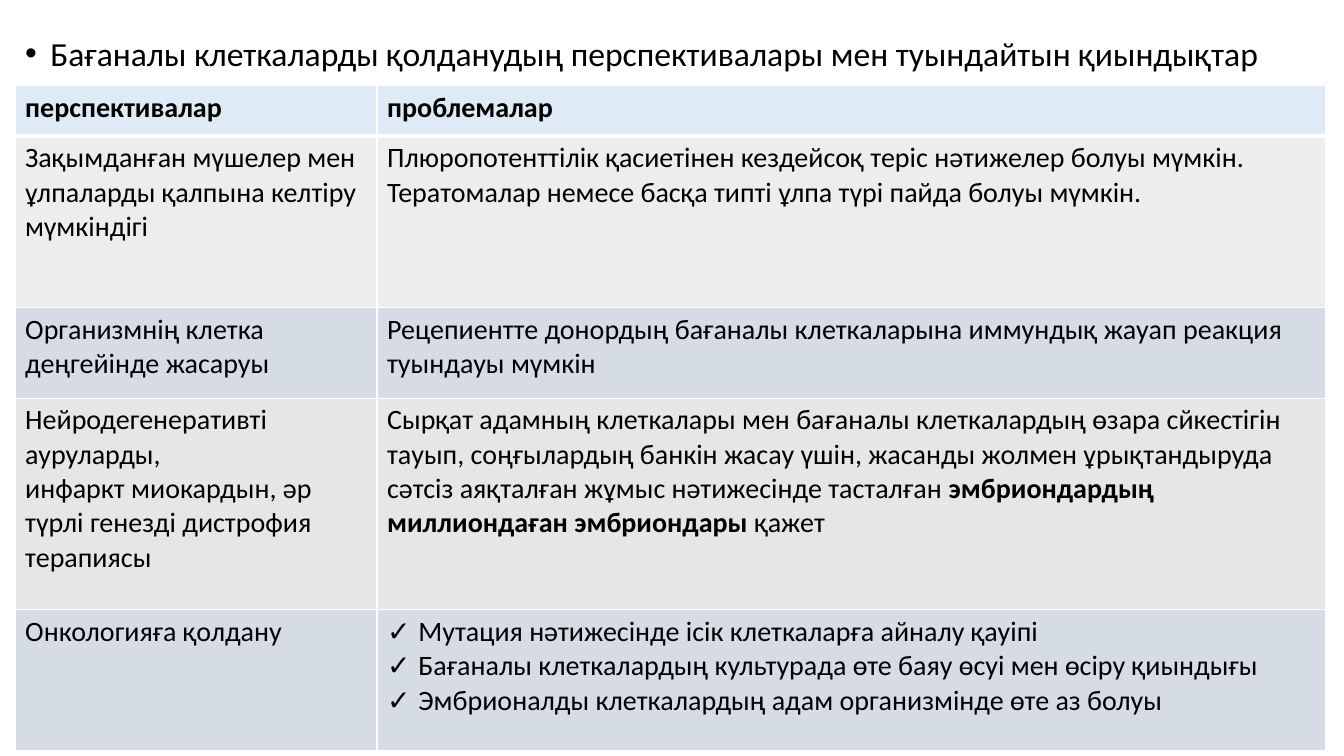
from dataclasses import dataclass

from lxml.etree import SubElement
from pptx import Presentation
from pptx.dml.color import RGBColor
from pptx.enum.text import MSO_ANCHOR, PP_ALIGN
from pptx.oxml import parse_xml
from pptx.oxml.ns import nsdecls, qn
from pptx.util import Inches, Length, Pt

BLACK = RGBColor(0x00, 0x00, 0x00)
WHITE = RGBColor(0xFF, 0xFF, 0xFF)
SKY = RGBColor(0xDE, 0xEB, 0xF7)
PALE = RGBColor(0xED, 0xED, 0xED)
STEEL = RGBColor(0xD6, 0xDC, 0xE5)
GREY = RGBColor(0xE7, 0xE6, 0xE6)

FONT = "Calibri"
UNIT = 0.1
LEFT, WIDE = 1.5, 130.1
COLS = (35.9, 94.1)


@dataclass(frozen=True)
class Run:
    text: str
    bold: bool = False


@dataclass(frozen=True)
class Para:
    runs: tuple[Run, ...]
    bullet: str = ""
    indent: float = 0


@dataclass(frozen=True)
class Row:
    height: float
    fill: RGBColor
    cells: tuple[tuple[Para, ...], ...]
    edge: float = 1


def grid(count: float) -> Length:
    return Inches(count * UNIT)


def plain(*lines: str, bold: bool = False) -> tuple[Para, ...]:
    return tuple(Para((Run(line, bold),)) for line in lines)


def checks(*lines: str) -> tuple[Para, ...]:
    return tuple(Para((Run(line),), "✓", 3.1) for line in lines)


TITLE = (Para((Run("Бағаналы клеткаларды қолданудың перспективалары мен туындайтын қиындықтар"),), "•", 2.5),)

ROWS = (
    Row(5, SKY, (plain("перспективалар", bold=True), plain("проблемалар", bold=True)), 3),
    Row(17, PALE, (
        plain("Зақымданған мүшелер мен ұлпаларды қалпына келтіру мүмкіндігі"),
        plain("Плюропотенттілік қасиетінен кездейсоқ теріс нәтижелер болуы мүмкін.",
              "Тератомалар немесе басқа типті ұлпа түрі пайда болуы мүмкін."),
    )),
    Row(9, STEEL, (
        plain("Организмнің клетка деңгейінде жасаруы"),
        plain("Рецепиентте донордың бағаналы клеткаларына иммундық жауап реакция туындауы мүмкін"),
    )),
    Row(21, GREY, (
        plain("Нейродегенеративті ауруларды,",
              "инфаркт миокардын, әр түрлі генезді дистрофия терапиясы"),
        (Para((
            Run("Сырқат адамның клеткалары мен бағаналы клеткалардың өзара сйкестігін тауып, "
                "соңғылардың банкін жасау үшін, жасанды жолмен ұрықтандыруда сәтсіз аяқталған "
                "жұмыс нәтижесінде тасталған "),
            Run("эмбриондардың миллиондаған эмбриондары ", True),
            Run("қажет"),
        )),),
    )),
    Row(14, STEEL, (
        plain("Онкологияға қолдану"),
        checks("Мутация нәтижесінде ісік клеткаларға айналу қауіпі",
               "Бағаналы клеткалардың культурада өте баяу өсуі мен өсіру қиындығы",
               "Эмбрионалды клеткалардың адам организмінде өте аз болуы"),
    )),
)


def write(frame, paras: tuple[Para, ...], size: float, lead: float = 1, before: float = 0) -> None:
    frame.word_wrap = True
    for rank, para in enumerate(paras):
        line = frame.paragraphs[0] if rank == 0 else frame.add_paragraph()
        line.alignment = PP_ALIGN.LEFT
        line.line_spacing = lead
        line.space_before = Pt(before)
        if para.bullet:
            props = line._p.get_or_add_pPr()
            props.set("marL", str(grid(para.indent)))
            props.set("indent", str(-grid(para.indent)))
            SubElement(props, qn("a:buFont")).set("typeface", "Arial")
            SubElement(props, qn("a:buChar")).set("char", para.bullet)
        for part in para.runs:
            run = line.add_run()
            run.text = part.text
            run.font.name = FONT
            run.font.size = Pt(size)
            run.font.bold = part.bold
            run.font.color.rgb = BLACK


def border(cell, top: float, bottom: float) -> None:
    props = cell._tc.get_or_add_tcPr()
    sides = {"lnL": 1, "lnR": 1, "lnT": top, "lnB": bottom}
    for rank, (side, width) in enumerate(sides.items()):
        props.insert(rank, parse_xml(
            f'<a:{side} {nsdecls("a")} w="{Pt(width)}"><a:solidFill>'
            f'<a:srgbClr val="{WHITE}"/></a:solidFill></a:{side}>'))


def chart(slide, rows: tuple[Row, ...]) -> None:
    high = sum(row.height for row in rows)
    table = slide.shapes.add_table(
        len(rows), len(COLS), grid(LEFT), grid(8.5), grid(WIDE), grid(high)).table
    for col, width in zip(table.columns, COLS):
        col.width = grid(width)
    top = 1
    for y, row in enumerate(rows):
        table.rows[y].height = grid(row.height)
        for x, paras in enumerate(row.cells):
            cell = table.cell(y, x)
            cell.fill.solid()
            cell.fill.fore_color.rgb = row.fill
            border(cell, top, row.edge)
            write(cell.text_frame, paras, 20)
        top = row.edge


def main() -> None:
    deck = Presentation()
    deck.slide_width, deck.slide_height = Inches(13.33), Inches(7.5)
    slide = deck.slides.add_slide(deck.slide_layouts[6])
    slide.background.fill.solid()
    slide.background.fill.fore_color.rgb = WHITE
    box = slide.shapes.add_textbox(grid(LEFT), grid(3.2), grid(WIDE), grid(63.4))
    box.text_frame.vertical_anchor = MSO_ANCHOR.TOP
    write(box.text_frame, TITLE, 24, 0.9, 10)
    chart(slide, ROWS)
    deck.save("out.pptx")


if __name__ == "__main__":
    main()
